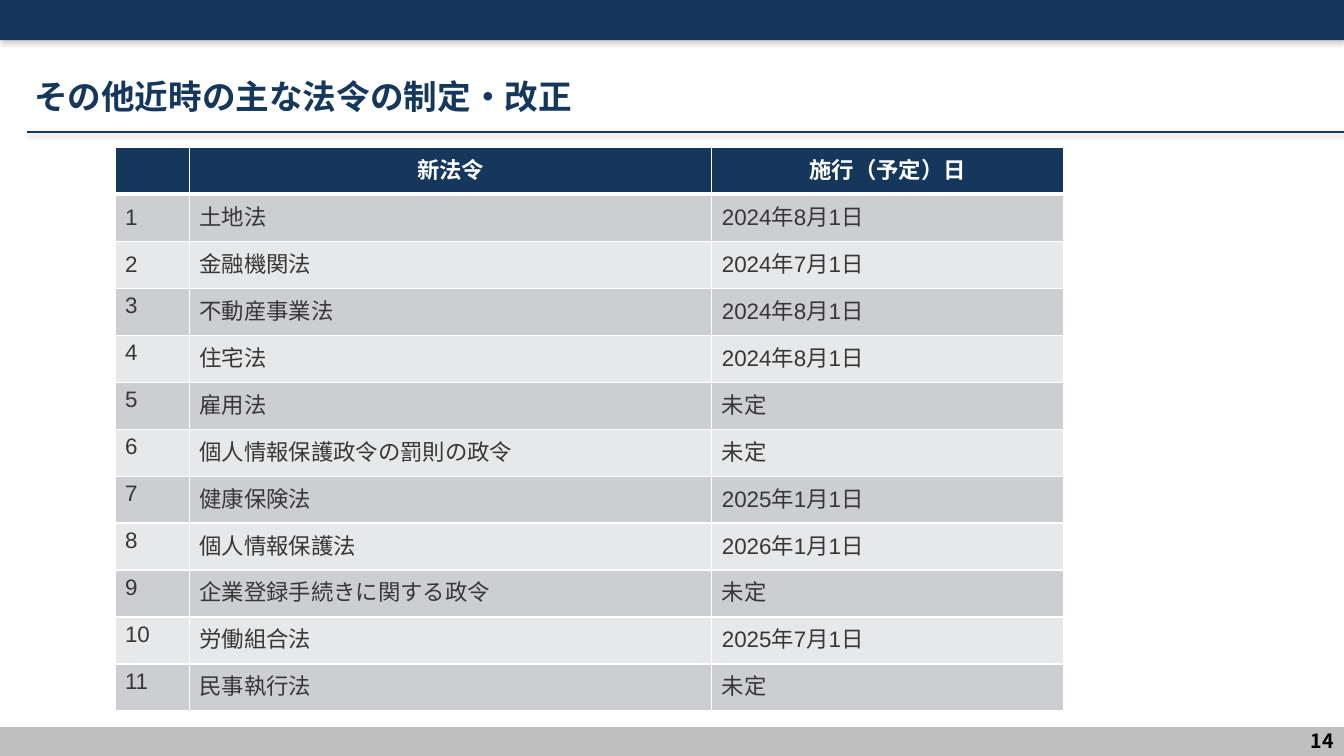
from lxml.etree import SubElement as Sub
from pptx import Presentation
from pptx.dml.color import RGBColor as Color
from pptx.enum.shapes import MSO_CONNECTOR as Link, MSO_SHAPE as Shape
from pptx.enum.text import MSO_ANCHOR as Anchor, PP_ALIGN as Align
from pptx.oxml.ns import qn
from pptx.util import Inches, Pt

NAVY = Color(0x14, 0x37, 0x5B)
GRAY = Color(0xBF, 0xBF, 0xBF)
DARK = Color(0xCC, 0xCE, 0xD2)
PALE = Color(0xE7, 0xE8, 0xEA)
INK = Color(0x37, 0x37, 0x37)
WHITE = Color(0xFF, 0xFF, 0xFF)
BLACK = Color(0, 0, 0)
SHADE = Color(0x80, 0x80, 0x80)

WIDE, HIGH = Inches(13.33), Inches(7.5)
SANS, CJK = "Arial", "Noto Sans CJK JP"
TITLE = {"name": CJK, "size": Pt(24), "bold": True, "color": NAVY}
PAGE = {"name": CJK, "size": Pt(14), "bold": True, "color": BLACK}
HEAD = {"name": SANS, "size": Pt(16), "bold": True, "color": WHITE}
BODY = {"name": SANS, "size": Pt(16), "bold": False, "color": INK}

COLS = (5.55, 38.86, 26.18)
ROW = 6.22
LAWS = (
    ("", "新法令", "施行（予定）日"),
    ("1　", "土地法", "2024年8月1日"),
    ("2　", "金融機関法", "2024年7月1日"),
    ("3", "不動産事業法", "2024年8月1日"),
    ("4", "住宅法", "2024年8月1日"),
    ("5", "雇用法", "未定"),
    ("6", "個人情報保護政令の罰則の政令", "未定"),
    ("7", "健康保険法", "2025年1月1日"),
    ("8", "個人情報保護法", "2026年1月1日"),
    ("9", "企業登録手続きに関する政令", "未定"),
    ("10", "労働組合法", "2025年7月1日"),
    ("11", "民事執行法", "未定"),
)


def across(share):
    return round(WIDE * share / 100)


def down(share):
    return round(HIGH * share / 100)


def area(x, y, w, h):
    return across(x), down(y), across(w), down(h)


def write(frame, text, look, align=Align.LEFT):
    para = frame.paragraphs[0]
    para.alignment = align
    run = para.add_run()
    run.text = text
    for key, value in look.items():
        if key == "color":
            run.font.color.rgb = value
        else:
            setattr(run.font, key, value)
    Sub(run.font._element, qn("a:ea"), typeface=CJK)


def label(slide, box, text, look, align=Align.LEFT):
    frame = slide.shapes.add_textbox(*area(*box)).text_frame
    frame.word_wrap = True
    frame.vertical_anchor = Anchor.MIDDLE
    write(frame, text, look, align)


def shadow(props, alpha, blur, dist):
    effect = Sub(props, qn("a:effectLst"))
    outer = Sub(effect, qn("a:outerShdw"), blurRad=str(Pt(blur)),
                dist=str(Pt(dist)), dir="5400000", rotWithShape="0")
    tint = Sub(outer, qn("a:srgbClr"), val=str(SHADE))
    Sub(tint, qn("a:alpha"), val=str(alpha * 1000))


def band(slide, box, color):
    bar = slide.shapes.add_shape(Shape.RECTANGLE, *area(*box))
    bar.fill.solid()
    bar.fill.fore_color.rgb = color
    bar.line.fill.background()
    return bar


def rule(slide, left, right, y):
    line = slide.shapes.add_connector(
        Link.STRAIGHT, across(left), down(y), across(right), down(y))
    line.line.color.rgb = NAVY
    line.line.width = Pt(2)
    shadow(line._element.spPr, 38, 3.1, 1.6)


def border(cell, sides):
    props = cell._tc.get_or_add_tcPr()
    for spot, (side, width) in enumerate(sides.items()):
        edge = Sub(props, qn(f"a:ln{side}"), w=str(Pt(width)))
        fill = Sub(edge, qn("a:solidFill"))
        Sub(fill, qn("a:srgbClr"), val=str(WHITE))
        props.insert(spot, edge)


def grid(slide, x, y):
    box = area(x, y, sum(COLS), ROW * len(LAWS))
    table = slide.shapes.add_table(len(LAWS), len(COLS), *box).table
    for col, share in zip(table.columns, COLS):
        col.width = across(share)
    for r, laws in enumerate(LAWS):
        table.rows[r].height = down(ROW)
        shade = (DARK if r % 2 else PALE) if r else NAVY
        look, align = (BODY, Align.LEFT) if r else (HEAD, Align.CENTER)
        sides = {"L": 1, "R": 1, "T": 1 if r != 1 else 3, "B": 1 if r else 3}
        for c, text in enumerate(laws):
            cell = table.cell(r, c)
            cell.fill.solid()
            cell.fill.fore_color.rgb = shade
            border(cell, sides)
            if text:
                write(cell.text_frame, text, look, align)


def main():
    deck = Presentation()
    deck.slide_width, deck.slide_height = WIDE, HIGH
    slide = deck.slides.add_slide(deck.slide_layouts[6])
    top = band(slide, (0, 0, 100, 5.33), NAVY)
    shadow(top._element.spPr, 35, 3.1, 1.8)
    rule(slide, 2.03, 100, 17.47)
    foot = band(slide, (0, 96.13, 100, 3.87), GRAY)
    foot.shadow.inherit = False
    label(slide, (1.8, 8, 96.4, 9.33), "その他近時の主な法令の制定・改正", TITLE)
    label(slide, (92.95, 96.13, 7.05, 3.73), "14", PAGE, Align.RIGHT)
    grid(slide, 8.55, 19.47)
    deck.save("out.pptx")


if __name__ == "__main__":
    main()
